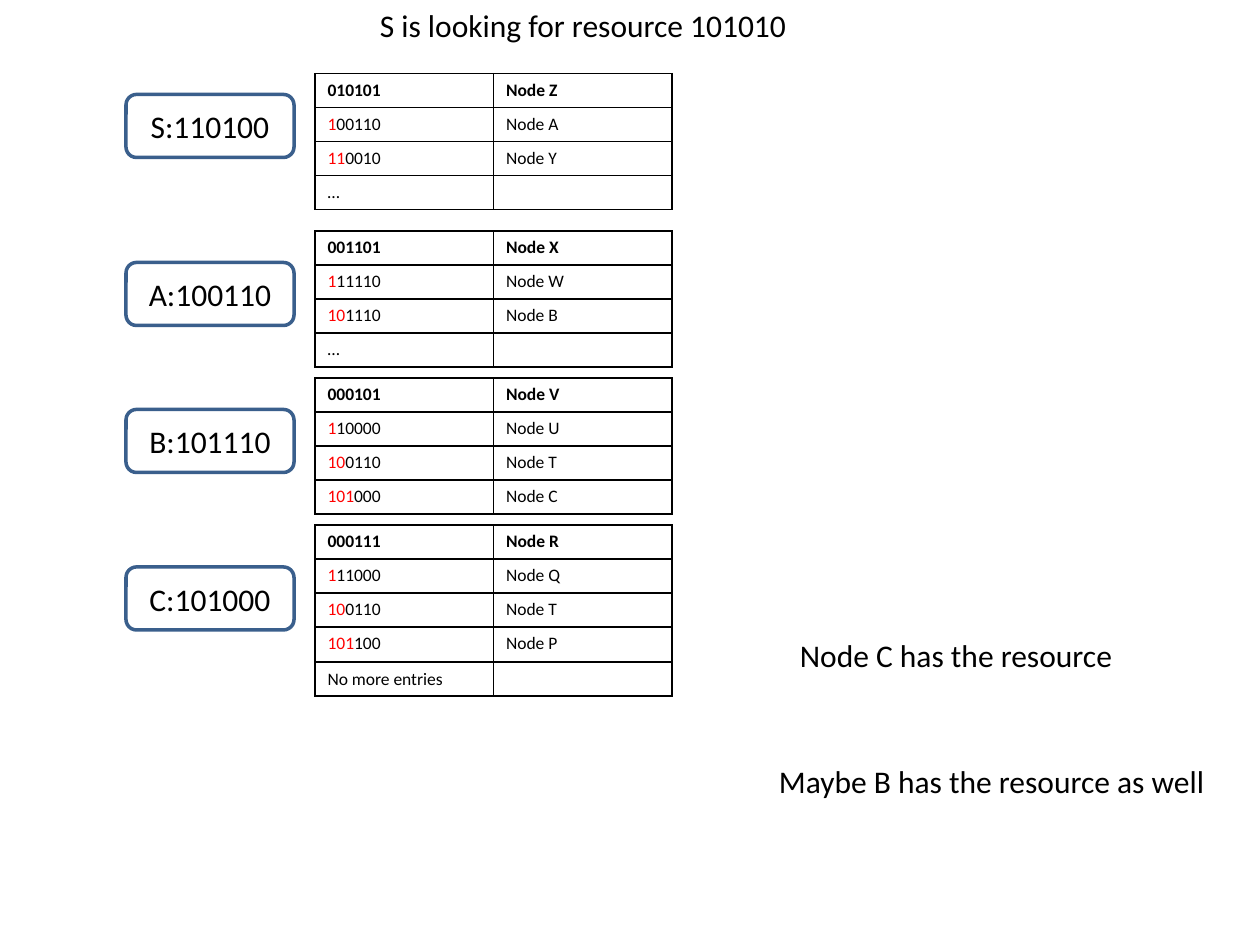
import pptx
import pptx.util
import pptx.dml.color
import pptx.enum.shapes
import pptx.enum.text
import pptx.oxml.ns
import lxml.etree

COLORS = {"ink": "000000", "match": "FF0000", "edge": "3A5F8C", "paper": "FFFFFF"}
FONT = "Calibri"
UNIT = pptx.util.Inches(1) // 12  # the slide is a grid of 120 by 90 units
ROW = 3.24

# node id, top of its box, top of its table, routing entries
NODES = [
    ("S:110100", 9, 7, [("010101", "Node Z"), ("100110", "Node A"),
                        ("110010", "Node Y"), ("…", "")]),
    ("A:100110", 25, 22, [("001101", "Node X"), ("111110", "Node W"),
                          ("101110", "Node B"), ("…", "")]),
    ("B:101110", 39, 36, [("000101", "Node V"), ("110000", "Node U"),
                          ("100110", "Node T"), ("101000", "Node C")]),
    ("C:101000", 54, 50, [("000111", "Node R"), ("111000", "Node Q"),
                          ("100110", "Node T"), ("101100", "Node P"),
                          ("No more entries", "")]),
]
NOTES = [
    ("S is looking for resource 101010", (35, 0, 41.5, 4.8)),
    ("Node C has the resource", (75, 60, 33.2, 4.8)),
    ("Maybe B has the resource as well", (73, 72, 43.4, 4.8)),
]


def grid(*cells):
    return [round(cell * UNIT) for cell in cells]


def rgb(name):
    return pptx.dml.color.RGBColor.from_string(COLORS[name])


def sub(parent, tag, **attrs):
    return lxml.etree.SubElement(parent, pptx.oxml.ns.qn(tag), **attrs)


def write(para, text, size=18, color="ink", bold=False):
    """Add a run, or size the empty line when there is no text."""
    if not text:
        sub(para._p, "a:endParaRPr", sz=str(size * 100))
        return
    run = para.add_run()
    run.text = text
    font = run.font
    font.name, font.size, font.bold = FONT, pptx.util.Pt(size), bold
    font.color.rgb = rgb(color)


def note(slide, box, text):
    frame = slide.shapes.add_textbox(*grid(*box)).text_frame
    frame.word_wrap = False
    frame.auto_size = pptx.enum.text.MSO_AUTO_SIZE.SHAPE_TO_FIT_TEXT
    write(frame.paragraphs[0], text)


def badge(slide, box, text):
    """Draw the rounded box that names a node."""
    kind = pptx.enum.shapes.MSO_SHAPE.ROUNDED_RECTANGLE
    shape = slide.shapes.add_shape(kind, *grid(*box))
    shape.shadow.inherit = False
    shape.fill.background()
    shape.line.color.rgb = rgb("edge")
    shape.line.width = pptx.util.Pt(2)
    frame = shape.text_frame
    frame.vertical_anchor = pptx.enum.text.MSO_ANCHOR.MIDDLE
    para = frame.paragraphs[0]
    para.alignment = pptx.enum.text.PP_ALIGN.CENTER
    write(para, text)


def dress(cell):
    """Give a cell its borders and fill."""
    props = cell._tc.get_or_add_tcPr()
    for side in "LRTB":
        line = sub(props, f"a:ln{side}", w=str(pptx.util.Pt(1)))
        sub(sub(line, "a:solidFill"), "a:srgbClr", val=COLORS["ink"])
    cell.fill.solid()
    cell.fill.fore_color.rgb = rgb("paper")


def routes(slide, box, rows):
    """Draw a routing table; row n shares its first n digits with the node."""
    table = slide.shapes.add_table(len(rows), 2, *grid(*box)).table
    for index, row in enumerate(rows):
        table.rows[index].height = grid(ROW)[0]
        for col, text in enumerate(row):
            cell = table.cell(index, col)
            dress(cell)
            para = cell.text_frame.paragraphs[0]
            cut = index if text.isdigit() else 0
            if cut:
                write(para, text[:cut], size=10, color="match")
            write(para, text[cut:], size=10, bold=index == 0)
    if len(rows) > 4:
        table.rows[3].height = pptx.util.Inches(0.28)


def main():
    deck = pptx.Presentation()
    deck.slide_width, deck.slide_height = grid(120, 90)
    slide = deck.slides.add_slide(deck.slide_layouts[6])
    for name, top, head, rows in NODES:
        badge(slide, (12, top, 16, 6), name)
        routes(slide, (30, head, 34, ROW * len(rows)), rows)
    for text, box in NOTES:
        note(slide, box, text)
    deck.save("out.pptx")


if __name__ == "__main__":
    main()
